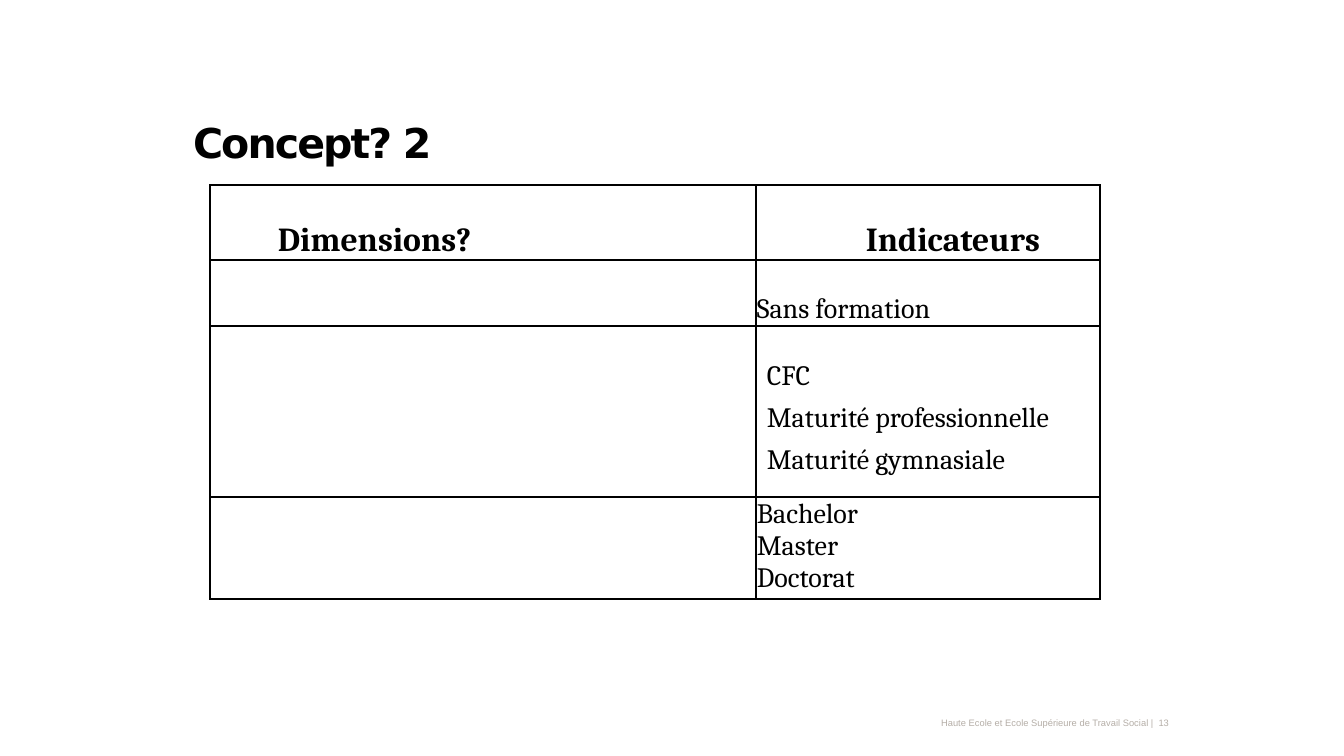
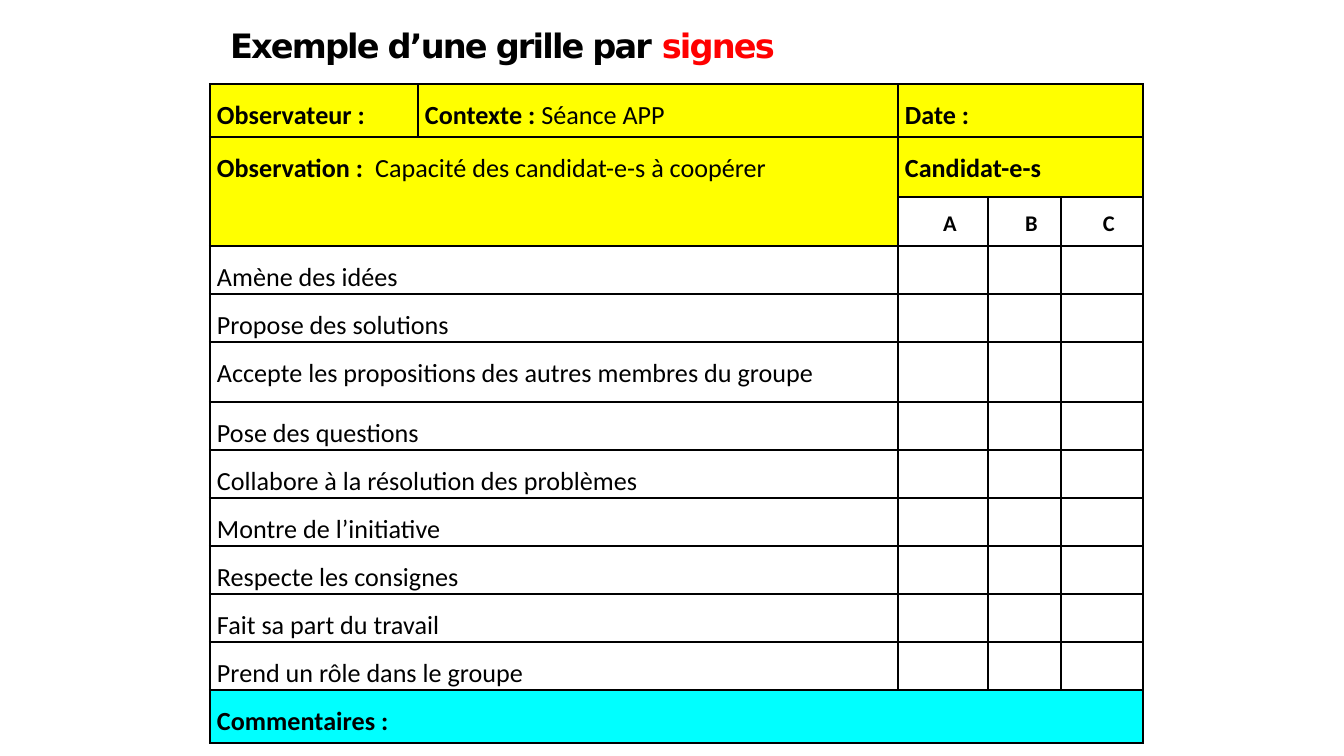
from dataclasses import dataclass

from lxml import etree
from pptx import Presentation
from pptx.dml.color import RGBColor
from pptx.enum.text import MSO_ANCHOR, PP_ALIGN
from pptx.oxml.ns import qn
from pptx.util import Pt

EMU_PER_PX = 914400 / 134.4
TOP, MIDDLE, BOTTOM = MSO_ANCHOR.TOP, MSO_ANCHOR.MIDDLE, MSO_ANCHOR.BOTTOM
LEFT, CENTER, RIGHT = PP_ALIGN.LEFT, PP_ALIGN.CENTER, PP_ALIGN.RIGHT

COLORS = {
    "ink": "000000",
    "accent": "FF0000",
    "footer": "B5AEA7",
    "heading": "FFFF00",
    "comments": "00FFFF",
}
TITLE_FONT, FOOTER_FONT = "DejaVu Sans", "Arial"
FOOTER = "Haute Ecole et Ecole Supérieure de Travail Social |  13"


@dataclass
class Entry:
    column: int
    lines: list
    span: int = 1
    fill: str = ""
    open_side: str = ""
    size: int = 14
    bold: bool = False
    align: int = LEFT
    anchor: int = TOP
    spacing: object = 1.5
    after: int = 0
    indent: int = 0
    top: int = 0


CONCEPT = {
    "title": [("Concept? 2", "ink")],
    "title_size": 22,
    "title_box": (180, 109, 1074, 105),
    "table_at": (210, 185),
    "columns": [546, 344],
    "rows": [75, 66, 171, 102],
    "font": "Cambria",
    "side_margin": 1,
    "left_edge": 1,
    "entries": [
        [
            Entry(0, ["Dimensions?"], size=18, bold=True, anchor=BOTTOM, spacing=1.15, indent=67),
            Entry(1, ["Indicateurs"], size=18, bold=True, anchor=BOTTOM, spacing=1.15, indent=109),
        ],
        [Entry(1, ["Sans formation"], size=15, anchor=BOTTOM, spacing=Pt(12))],
        [Entry(1, ["CFC", "Maturité professionnelle", "Maturité gymnasiale"],
               size=15, spacing=Pt(12.6), after=10, indent=10, top=43)],
        [Entry(1, ["Bachelor", "Master", "Doctorat"], size=15, spacing=1.0, top=1)],
    ],
}

SIGNS = [
    "Amène des idées",
    "Propose des solutions",
    "Accepte les propositions des autres membres du groupe",
    "Pose des questions",
    "Collabore à la résolution des problèmes",
    "Montre de l’initiative",
    "Respecte les consignes",
    "Fait sa part du travail",
    "Prend un rôle dans le groupe",
]
OBSERVATION = [("Observation :  ", True), ("Capacité des candidat-e-s à coopérer", False)]
CONTEXT = [("Contexte : ", True), ("Séance APP", False)]

GRID = {
    "title": [("Exemple d’une grille par ", "ink"), ("signes", "accent")],
    "title_size": 18,
    "title_box": (217, 16, 907, 59),
    "table_at": (210, 84),
    "columns": [208, 480, 90, 73, 82],
    "rows": [53, 60, 49] + [60 if sign.startswith("Accepte") else 48 for sign in SIGNS] + [53],
    "font": "Calibri",
    "side_margin": 7,
    "left_edge": 1.5,
    "entries": [
        [
            Entry(0, ["Observateur :"], fill="heading", bold=True),
            Entry(1, [CONTEXT], fill="heading"),
            Entry(2, ["Date :"], span=3, fill="heading", bold=True),
        ],
        [
            Entry(0, [OBSERVATION], span=2, fill="heading", open_side="B"),
            Entry(2, ["Candidat-e-s"], span=3, fill="heading", bold=True),
        ],
        [Entry(0, [], span=2, fill="heading", open_side="T")]
        + [Entry(column, [letter], size=12, bold=True, align=CENTER, indent=14)
           for column, letter in enumerate("ABC", start=2)],
        *[[Entry(0, [sign], span=2)] for sign in SIGNS],
        [Entry(0, ["Commentaires :"], span=5, fill="comments", bold=True)],
    ],
}


def px(length):
    return round(length * EMU_PER_PX)


def style(span, font, size, color, bold=False):
    span.font.name = font
    span.font.size = Pt(size)
    span.font.bold = bold
    span.font.color.rgb = RGBColor.from_string(COLORS[color])


def add_box(page, place, top=0):
    box = page.shapes.add_textbox(*map(px, place))
    frame = box.text_frame
    frame.word_wrap = True
    frame.margin_left = frame.margin_right = px(13)
    frame.margin_top, frame.margin_bottom = px(top), 0
    return frame


def add_title(page, content):
    para = add_box(page, content["title_box"], 9).paragraphs[0]
    for text, color in content["title"]:
        span = para.add_run()
        span.text = text
        style(span, TITLE_FONT, content["title_size"], color, True)
        span.font._element.set("spc", "-100")


def add_footer(page):
    frame = add_box(page, (851, 715, 332, 13))
    frame.vertical_anchor = MIDDLE
    para = frame.paragraphs[0]
    para.text = FOOTER
    para.alignment = RIGHT
    para.line_spacing = Pt(7)
    style(para.runs[0], FOOTER_FONT, 5, "footer")


def draw_borders(cell, widths):
    properties = cell._tc.get_or_add_tcPr()
    for side, width in widths.items():
        line = etree.SubElement(properties, qn(f"a:ln{side}"), w=str(Pt(width)))
        if width:
            fill = etree.SubElement(line, qn("a:solidFill"))
            etree.SubElement(fill, qn("a:srgbClr"), val=COLORS["ink"])
        else:
            etree.SubElement(line, qn("a:noFill"))


def write_entry(cell, entry, font):
    cell.vertical_anchor = entry.anchor
    cell.margin_top = px(entry.top)
    frame = cell.text_frame
    for number, line in enumerate(entry.lines):
        para = frame.add_paragraph() if number else frame.paragraphs[0]
        para.alignment = entry.align
        para.line_spacing = entry.spacing
        para.space_after = Pt(entry.after)
        if entry.indent:
            para._p.get_or_add_pPr().set("marL", str(px(entry.indent)))
        parts = [(line, entry.bold)] if isinstance(line, str) else line
        for text, bold in parts:
            span = para.add_run()
            span.text = text
            style(span, font, entry.size, "ink", bold)


def add_grid(page, content):
    columns, rows = content["columns"], content["rows"]
    place = (*content["table_at"], sum(columns), sum(rows))
    table = page.shapes.add_table(len(rows), len(columns), *map(px, place)).table
    table.first_row = table.horz_banding = False
    for column, width in zip(table.columns, columns):
        column.width = px(width)
    for row, height in zip(table.rows, rows):
        row.height = px(height)

    for row, entries in enumerate(content["entries"]):
        owners = {entry.column + step: entry for entry in entries for step in range(entry.span)}
        for column in range(len(columns)):
            cell, owner = table.cell(row, column), owners.get(column)
            cell.margin_left = cell.margin_right = px(content["side_margin"])
            cell.margin_top = cell.margin_bottom = 0
            widths = {"L": 1 if column else content["left_edge"], "R": 1, "T": 1, "B": 1}
            if owner and owner.open_side:
                widths[owner.open_side] = 0
            draw_borders(cell, widths)
            if owner and owner.fill:
                cell.fill.solid()
                cell.fill.fore_color.rgb = RGBColor.from_string(COLORS[owner.fill])
            else:
                cell.fill.background()
        for entry in entries:
            cell = table.cell(row, entry.column)
            if entry.span > 1:
                cell.merge(table.cell(row, entry.column + entry.span - 1))
            write_entry(cell, entry, content["font"])


def main():
    deck = Presentation()
    deck.slide_width, deck.slide_height = px(1344), px(756)
    for content in (CONCEPT, GRID):
        page = deck.slides.add_slide(deck.slide_layouts[6])
        if content is CONCEPT:
            add_footer(page)
        add_title(page, content)
        add_grid(page, content)
    deck.save("out.pptx")


if __name__ == "__main__":
    main()
